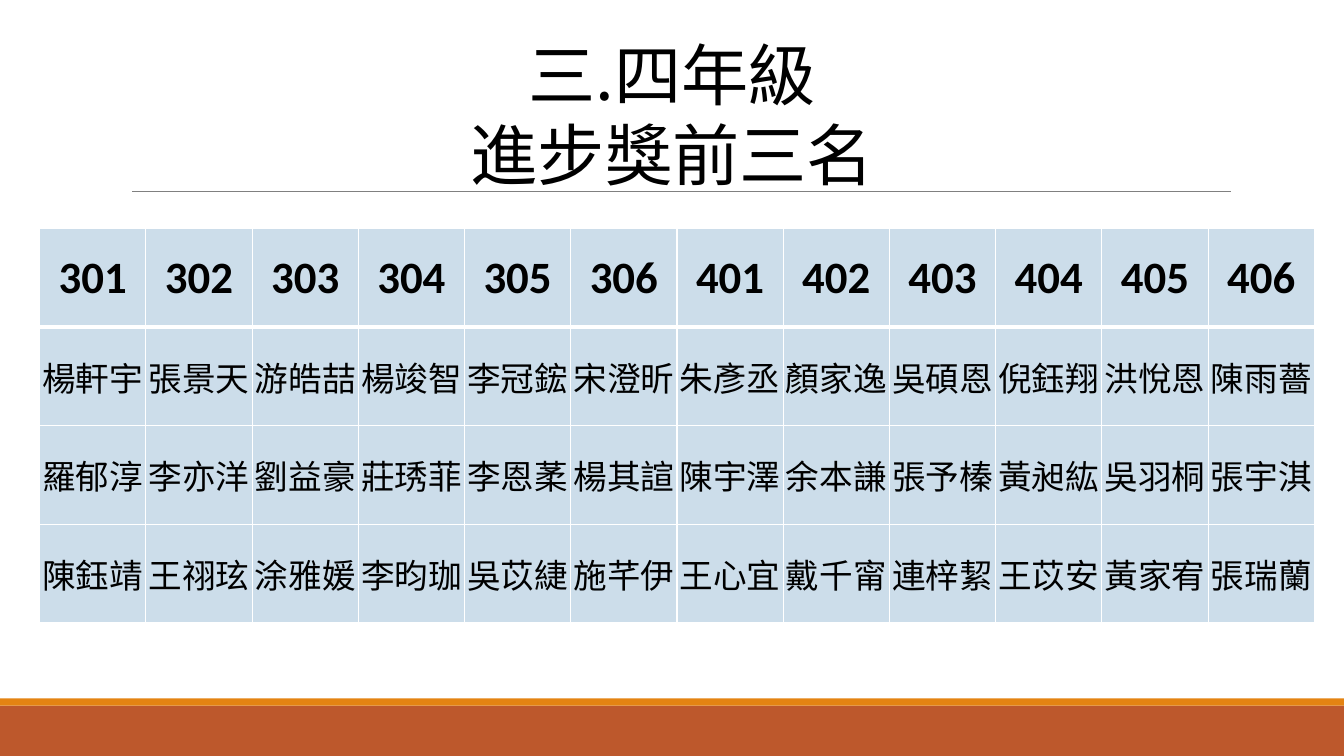
import pptx
import pptx.dml.color
import pptx.enum.shapes
import pptx.enum.text
import pptx.oxml
import pptx.oxml.ns
import pptx.util

HEADS = "301 302 303 304 305 306 401 402 403 404 405 406"
NAMES = [
    "楊軒宇 張景天 游皓喆 楊竣智 李冠鋐 宋澄昕 朱彥丞 顏家逸 吳碩恩 倪鈺翔 洪悅恩 陳雨薔",
    "羅郁淳 李亦洋 劉益豪 莊琇菲 李恩葇 楊其諠 陳宇澤 余本謙 張予榛 黃昶紘 吳羽桐 張宇淇",
    "陳鈺靖 王祤玹 涂雅媛 李昀珈 吳苡緁 施芊伊 王心宜 戴千甯 連梓絜 王苡安 黃家宥 張瑞蘭",
]


def shade(code):
    return pptx.dml.color.RGBColor.from_string(code)


class Board:
    """Holds the style and the current slide, laid out on 40 columns by 30 rows."""

    ink = "000000"
    tint = "CCDDEA"
    edge = "FFFFFF"
    title = {"size": pptx.util.Pt(48), "name": "Noto Sans CJK JP", "bold": False}
    head = {"size": pptx.util.Pt(32), "name": "Calibri", "bold": True}
    body = {"size": pptx.util.Pt(24), "name": "Noto Sans CJK SC", "bold": False}

    def __init__(self, deck):
        self.slide = deck.slides.add_slide(deck.slide_layouts[6])
        self.shapes = self.slide.shapes
        self.col = deck.slide_width / 40
        self.row = deck.slide_height / 30

    def place(self, x, y, w, h):
        return [round(n) for n in
                (x * self.col, y * self.row, w * self.col, h * self.row)]

    def label(self, para, text, style):
        para.alignment = pptx.enum.text.PP_ALIGN.CENTER
        run = para.add_run()
        run.text = text
        for key, value in style.items():
            setattr(run.font, key, value)
        run.font.color.rgb = shade(self.ink)
        east = pptx.oxml.parse_xml(
            f'<a:ea {pptx.oxml.ns.nsdecls("a")} typeface="{style["name"]}"/>')
        run._r.rPr.find(pptx.oxml.ns.qn("a:latin")).addnext(east)

    def bar(self, spot, code):
        kind = pptx.enum.shapes.MSO_SHAPE.RECTANGLE
        bar = self.shapes.add_shape(kind, *self.place(*spot))
        bar.shadow.inherit = False
        bar.fill.solid()
        bar.fill.fore_color.rgb = shade(code)
        bar.line.fill.background()

    def rule(self, left, right, y, code):
        x, top, w, _ = self.place(left, y, right - left, 0)
        kind = pptx.enum.shapes.MSO_CONNECTOR.STRAIGHT
        rule = self.shapes.add_connector(kind, x, top, x + w, top)
        rule.line.color.rgb = shade(code)
        rule.line.width = pptx.util.Pt(0.5)
        rule._element.spPr.append(pptx.oxml.parse_xml(
            f'<a:effectLst {pptx.oxml.ns.nsdecls("a")}/>'))

    def text(self, spot, lines):
        frame = self.shapes.add_textbox(*self.place(*spot)).text_frame
        frame.word_wrap = False
        frame.margin_top = pptx.util.Inches(0.13)
        for i, line in enumerate(lines):
            para = frame.add_paragraph() if i else frame.paragraphs[0]
            para.line_spacing = pptx.util.Pt(57)
            self.label(para, line, self.title)

    def frame(self, cell, sides):
        for side, width in sides.items():
            cell._tc.get_or_add_tcPr().append(pptx.oxml.parse_xml(
                f'<a:ln{side} {pptx.oxml.ns.nsdecls("a")} w="{int(pptx.util.Pt(width))}">'
                f'<a:solidFill><a:srgbClr val="{self.edge}"/></a:solidFill></a:ln{side}>'))

    def table(self, spot, rows):
        x, y, w, h = self.place(*spot)
        grid = self.shapes.add_table(len(rows), len(rows[0]), x, y, w, h).table
        grid.first_row = grid.horz_banding = False
        for r, row in enumerate(rows):
            for c, text in enumerate(row):
                cell = grid.cell(r, c)
                self.frame(cell, {"L": 1, "R": 1, "T": 3 if r == 1 else 1,
                                  "B": 1 if r else 3})
                cell.fill.solid()
                cell.fill.fore_color.rgb = shade(self.tint)
                cell.vertical_anchor = pptx.enum.text.MSO_ANCHOR.MIDDLE
                if r:
                    for side in ("left", "right", "top", "bottom"):
                        setattr(cell, f"margin_{side}", pptx.util.Inches(0.01))
                self.label(cell.text_frame.paragraphs[0], text,
                           self.body if r else self.head)


def main():
    deck = pptx.Presentation()
    deck.slide_width = pptx.util.Inches(13.33)
    deck.slide_height = pptx.util.Inches(7.5)
    board = Board(deck)
    board.bar((0, 28, 40, 2), "BD582C")
    board.bar((0, 27.72, 40, 0.28), "E48312")
    board.rule(3.93, 36.64, 7.6, "808080")
    board.table((1.18, 9.08, 37.95, 15.64), [row.split() for row in [HEADS, *NAMES]])
    board.text((13.65, 0.84, 12.72, 6.88), ["三.四年級", "進步獎前三名"])
    deck.save("out.pptx")


if __name__ == "__main__":
    main()
